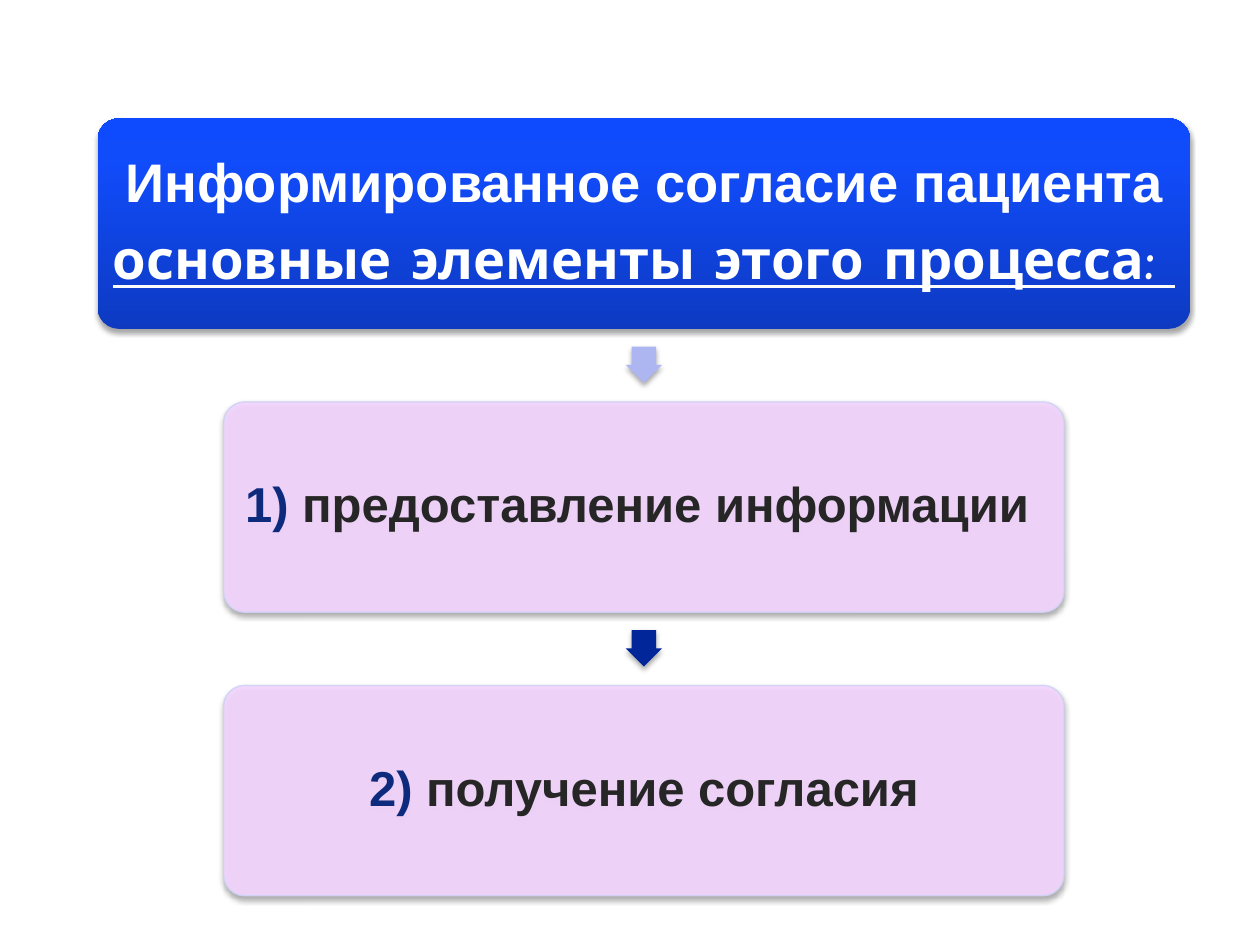
from copy import deepcopy
from dataclasses import dataclass

from pptx import Presentation
from pptx.dml.color import RGBColor
from pptx.enum.shapes import MSO_SHAPE
from pptx.enum.text import MSO_ANCHOR, PP_ALIGN
from pptx.oxml import parse_xml
from pptx.oxml.ns import nsdecls, qn
from pptx.util import Inches, Pt

ROUND = MSO_SHAPE.ROUNDED_RECTANGLE
ARROW = MSO_SHAPE.RIGHT_ARROW
MIDDLE = MSO_ANCHOR.MIDDLE
CENTER = PP_ALIGN.CENTER


@dataclass(frozen=True)
class Theme:
    font: str = "Arial"
    accent: str = "Comic Neue"
    head: int = 31
    body: int = 28
    white: str = "FFFFFF"
    navy: str = "0E2A7C"
    dark: str = "262626"
    pink: str = "F4D5FF"
    edge: str = "CDD2F6"
    stops: tuple = ((0, "0D3AC1"), (0.8, "114CFB"), (1, "0E4BFF"))


@dataclass(frozen=True)
class Part:
    text: str
    color: str
    font: str
    under: bool = False


@dataclass(frozen=True)
class Card:
    width: float
    size: int
    lines: tuple
    head: bool = False


THEME = Theme()
MID = 5.11
TOP = 0.94
HIGH = 1.67
STEP = 2.25
SIDE = 0.29
DROP = 1.81


def item(mark: str, text: str) -> Card:
    parts = (Part(mark, THEME.navy, THEME.font), Part(text, THEME.dark, THEME.font))
    return Card(6.67, THEME.body, (parts,))


CARDS = (
    Card(8.67, THEME.head, (
        (Part("Информированное согласие пациента", THEME.white, THEME.font),),
        (Part("основные элементы этого процесса: ", THEME.white, THEME.accent, True),),
    ), True),
    item("1) ", "предоставление информации "),
    item("2) ", "получение согласия"),
)
ARROWS = ("ADB6F1", "002699")


def rgb(code: str) -> RGBColor:
    return RGBColor.from_string(code)


def add_shade(shape) -> None:
    shape.shadow.inherit = False
    shape._element.spPr.find(qn("a:effectLst")).append(parse_xml(
        f'<a:outerShdw {nsdecls("a")} blurRad="{Pt(3.1)}" dist="{Pt(1.8)}" '
        'dir="5400000" rotWithShape="0"><a:srgbClr val="000000">'
        '<a:alpha val="35000"/></a:srgbClr></a:outerShdw>'))


def fill_head(shape) -> None:
    shape.line.fill.background()
    fill = shape.fill
    fill.gradient()
    fill.gradient_angle = 90
    stops = shape._element.spPr.find(qn("a:gradFill")).find(qn("a:gsLst"))
    stops.append(deepcopy(stops[-1]))
    for stop, (place, color) in zip(fill.gradient_stops, THEME.stops):
        stop.position = place
        stop.color.rgb = rgb(color)


def fill_item(shape) -> None:
    shape.fill.solid()
    shape.fill.fore_color.rgb = rgb(THEME.pink)
    shape.line.color.rgb = rgb(THEME.edge)
    shape.line.width = Pt(0.75)
    for color in shape._element.spPr.iter(qn("a:srgbClr")):
        color.append(parse_xml(f'<a:alpha {nsdecls("a")} val="90000"/>'))


def add_text(shape, card: Card) -> None:
    frame = shape.text_frame
    frame.word_wrap = True
    frame.vertical_anchor = MIDDLE
    frame.margin_left = frame.margin_right = 0
    frame.margin_top = frame.margin_bottom = Inches(0.04)
    frame.text = "\n".join("" for _ in card.lines)
    for para, parts in zip(frame.paragraphs, card.lines):
        para.alignment = CENTER
        para.line_spacing = 0.9
        para.space_after = Pt(0.35 * card.size)
        for part in parts:
            run = para.add_run()
            run.text = part.text
            run.font.name = part.font
            run.font.size = Pt(card.size)
            run.font.bold = True
            run.font.underline = part.under
            run.font.color.rgb = rgb(part.color)


def add_card(slide, card: Card, top: float) -> None:
    shape = slide.shapes.add_shape(
        ROUND, Inches(MID - card.width / 2), Inches(top), Inches(card.width), Inches(HIGH))
    shape.adjustments[0] = 0.1
    if card.head:
        fill_head(shape)
    else:
        fill_item(shape)
    add_shade(shape)
    add_text(shape, card)


def add_arrow(slide, color: str, top: float) -> None:
    shape = slide.shapes.add_shape(
        ARROW, Inches(MID - SIDE / 2), Inches(top), Inches(SIDE), Inches(SIDE))
    shape.rotation = 90
    shape.adjustments[0] = 0.67
    shape.adjustments[1] = 0.5
    shape.fill.solid()
    shape.fill.fore_color.rgb = rgb(color)
    shape.line.fill.background()
    add_shade(shape)


def main() -> None:
    deck = Presentation()
    deck.slide_width = Inches(10)
    deck.slide_height = Inches(7.5)
    slide = deck.slides.add_slide(deck.slide_layouts[6])
    for row, card in enumerate(CARDS):
        add_card(slide, card, TOP + row * STEP)
    for row, color in enumerate(ARROWS):
        add_arrow(slide, color, TOP + row * STEP + DROP)
    deck.save("out.pptx")


if __name__ == "__main__":
    main()
